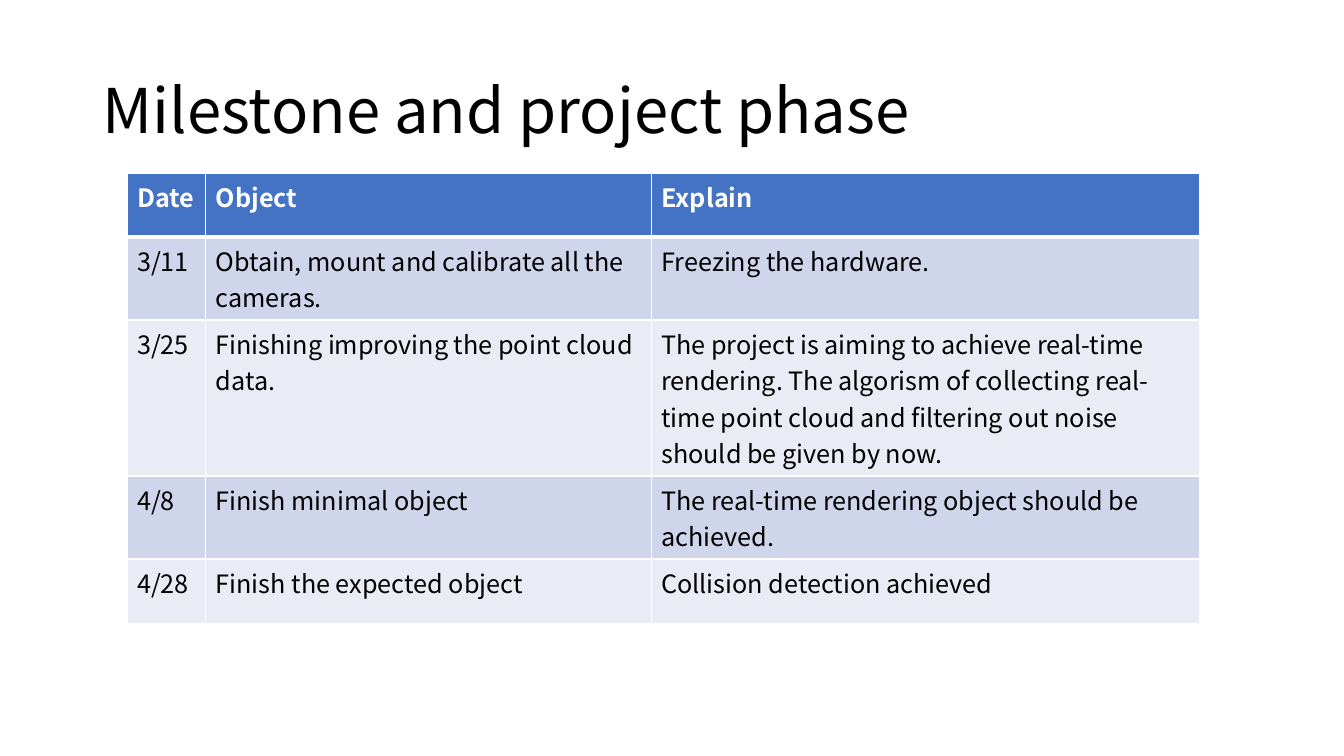
from lxml import etree
from pptx import Presentation
from pptx.dml.color import RGBColor
from pptx.enum import text
from pptx.oxml import ns
from pptx.util import Inches, Pt

FONT = "Noto Sans CJK SC"
BLACK = RGBColor(0x00, 0x00, 0x00)
WHITE = RGBColor(0xFF, 0xFF, 0xFF)
HEADER_BLUE = RGBColor(0x44, 0x72, 0xC4)
BANDS = (RGBColor(0xCF, 0xD5, 0xEA), RGBColor(0xE9, 0xEB, 0xF5))

MILESTONES = [
    ("Date", "Object", "Explain"),
    ("3/11", "Obtain, mount and calibrate all the cameras.", "Freezing the hardware."),
    ("3/25", "Finishing improving the point cloud data.",
     "The project is aiming to achieve real-time rendering. The algorism of "
     "collecting real-time point cloud and filtering out noise should be given by now."),
    ("4/8", "Finish minimal object", "The real-time rendering object should be achieved."),
    ("4/28", "Finish the expected object", "Collision detection achieved"),
]
COLUMN_WIDTHS = (0.78, 4.42, 5.44)
ROW_HEIGHTS = (0.63, 0.64, 1.09, 0.64, 0.64)


def format_font(font, size, color, bold=False):
    for name, value in {"name": FONT, "size": Pt(size), "bold": bold}.items():
        setattr(font, name, value)
    font.color.rgb = color


def add_title(slide, left, top, width, height):
    title = slide.shapes.title
    box = {"left": left, "top": top, "width": width, "height": height}
    for name, value in box.items():
        setattr(title, name, Inches(value))
    frame = title.text_frame
    frame.text = "Milestone and project phase"
    frame_format = {"word_wrap": True, "auto_size": text.MSO_AUTO_SIZE.NONE,
                    "vertical_anchor": text.MSO_ANCHOR.MIDDLE}
    for name, value in frame_format.items():
        setattr(frame, name, value)
    heading = frame.paragraphs[0]
    heading.alignment = text.PP_ALIGN.LEFT
    heading.line_spacing = 0.9
    format_font(heading.runs[0].font, 44, BLACK)


def set_borders(cell, bottom, top):
    """Draw white cell borders; bottom and top are widths in points."""
    properties = cell._tc.get_or_add_tcPr()
    widths = {"a:lnL": 1, "a:lnR": 1, "a:lnT": top, "a:lnB": bottom}
    for position, (tag, width) in enumerate(widths.items()):
        line = etree.Element(ns.qn(tag), w=str(Pt(width)))
        fill = etree.SubElement(line, ns.qn("a:solidFill"))
        etree.SubElement(fill, ns.qn("a:srgbClr"), val=str(WHITE))
        properties.insert(position, line)


def add_milestone_table(slide, left, top):
    table = slide.shapes.add_table(
        len(ROW_HEIGHTS), len(COLUMN_WIDTHS), Inches(left), Inches(top),
        Inches(sum(COLUMN_WIDTHS)), Inches(sum(ROW_HEIGHTS))).table
    for column, width in zip(table.columns, COLUMN_WIDTHS):
        column.width = Inches(width)
    for index, (row, height, entries) in enumerate(
            zip(table.rows, ROW_HEIGHTS, MILESTONES)):
        row.height = Inches(height)
        header = index == 0
        for cell, entry in zip(row.cells, entries):
            cell.text = entry
            format_font(cell.text_frame.paragraphs[0].runs[0].font, 18,
                        WHITE if header else BLACK, bold=header)
            cell.fill.solid()
            cell.fill.fore_color.rgb = HEADER_BLUE if header else BANDS[(index - 1) % 2]
            set_borders(cell, bottom=3 if header else 1, top=3 if index == 1 else 1)


def main():
    deck = Presentation()
    deck.slide_width, deck.slide_height = Inches(13.33), Inches(7.5)
    slide = deck.slides.add_slide(deck.slide_layouts[5])
    slide.background.fill.solid()
    slide.background.fill.fore_color.rgb = WHITE
    add_title(slide, 0.92, 0.4, 11.5, 1.45)
    add_milestone_table(slide, 1.26, 1.72)
    deck.save("out.pptx")


if __name__ == "__main__":
    main()
